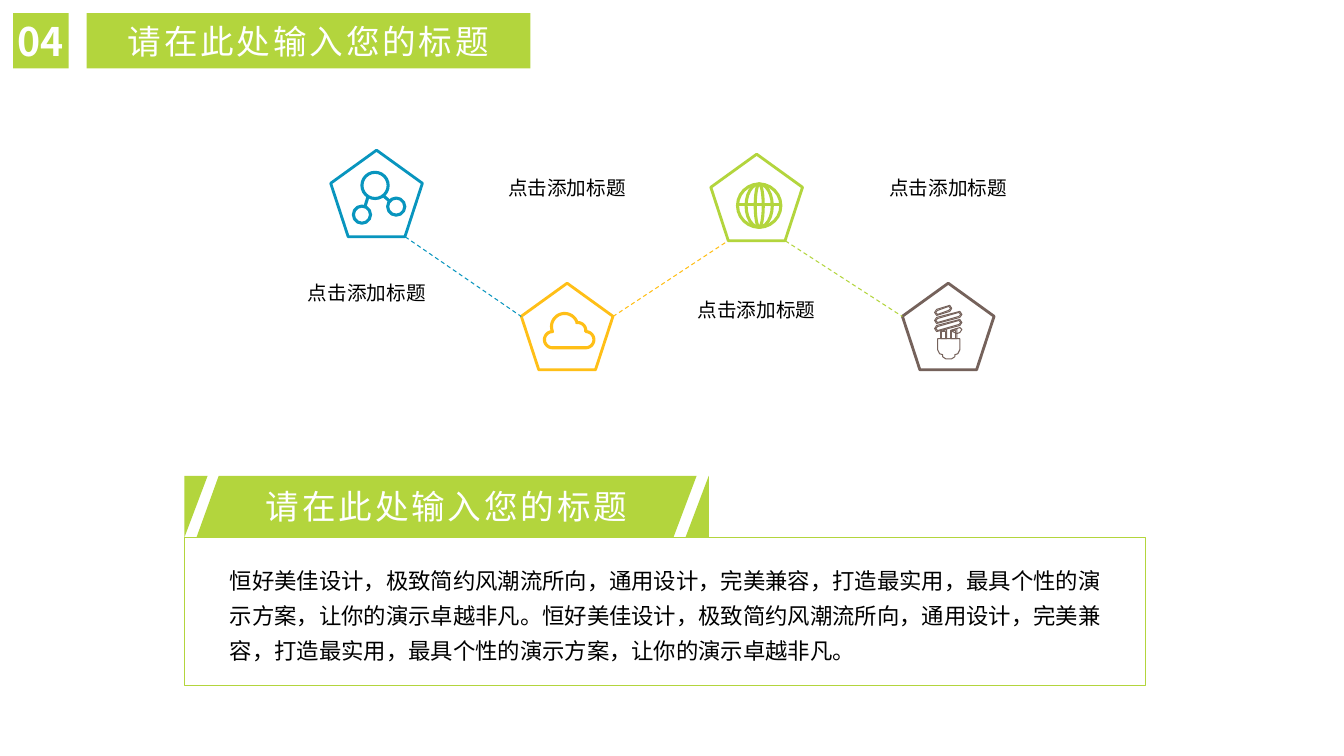
"""Build the four-step pentagon slide."""
from math import cos, radians, sin
from lxml import etree
from pptx import Presentation
from pptx.dml.color import RGBColor
from pptx.enum import dml, shapes, text
from pptx.oxml import ns
from pptx.util import Inches, Pt

BLUE = RGBColor(0x08, 0x95, 0xBE)
AMBER = RGBColor(0xFF, 0xBF, 0x17)
GREEN = RGBColor(0xB3, 0xD5, 0x3D)
BROWN = RGBColor(0x75, 0x62, 0x5B)
BLACK = RGBColor(0, 0, 0)
WHITE = RGBColor(0xFF, 0xFF, 0xFF)
KIND = shapes.MSO_SHAPE
MID = text.MSO_ANCHOR.MIDDLE
CENTER = text.PP_ALIGN.CENTER
HEAD = "请在此处输入您的标题"
LABEL = "点击添加标题"
CLAIM = "恒好美佳设计，极致简约风潮流所向，通用设计，完美兼容，打造最实用，最具个性的演示方案，让你的演示卓越非凡。"
STEPS = ((3.28, 1.49, BLUE), (5.17, 2.81, AMBER), (7.05, 1.53, GREEN), (8.95, 2.81, BROWN))


def assign(item, values):
    for name, value in values.items():
        setattr(item, name, value)


def arc(x, y, size, start, end):
    turns = [radians(start + (end - start) * n / 24) for n in range(25)]
    return [(x + size * cos(a), y + size * sin(a)) for a in turns]


class Deck:
    """Hold the style and the current slide."""
    plain = {"name": "Arial", "size": Pt(14)}
    title = {"name": "Noto Sans CJK SC", "size": Pt(24)}
    asian = "Noto Sans CJK SC"

    def __init__(self, show, layout):
        self.slide = show.slides.add_slide(show.slide_layouts[layout])
        self.items = self.slide.shapes

    def paint(self, item, fill=None, line=None, width=0.75):
        if fill is None:
            item.fill.background()
        else:
            item.fill.solid()
            item.fill.fore_color.rgb = fill
        if line is None:
            item.line.fill.background()
        else:
            item.line.color.rgb = line
            item.line.width = Pt(width)
        if not item.is_placeholder:
            item.shadow.inherit = False
        return item

    def shape(self, kind, box, **look):
        return self.paint(self.items.add_shape(kind, *map(Inches, box)), **look)

    def ring(self, x, y, wide, high, color):
        box = (x - wide / 2, y - high / 2, wide, high)
        self.shape(KIND.OVAL, box, line=color, width=2.2)

    def outline(self, loops, **look):
        form = None
        for loop in loops:
            first, *rest = [(Inches(x), Inches(y)) for x, y in loop]
            if form is None:
                form = self.items.build_freeform(*first)
            else:
                form.move_to(*first)
            form.add_line_segments(rest, close=True)
        return self.paint(form.convert_to_shape(), **look)

    def line(self, start, end, color, width=0.75, dash=None):
        ends = map(Inches, (*start, *end))
        link = self.items.add_connector(shapes.MSO_CONNECTOR.STRAIGHT, *ends)
        link.line.color.rgb = color
        assign(link.line, {"width": Pt(width), "dash_style": dash})
        etree.SubElement(link._element.spPr, ns.qn("a:effectLst"))

    def put(self, item, words, font, color, frame=None, para=None, space=0):
        box = item.text_frame
        assign(box, {"word_wrap": True, "auto_size": text.MSO_AUTO_SIZE.NONE,
                     **(frame or {})})
        block = box.paragraphs[0]
        assign(block, {"alignment": CENTER, **(para or {})})
        run = block.add_run()
        run.text = words
        assign(run.font, font)
        run.font.color.rgb = color
        props = run._r.get_or_add_rPr()
        props.set("lang", "zh-CN")
        if space:
            props.set("spc", str(space))
        face = etree.Element(ns.qn("a:ea"))
        face.set("typeface", self.asian)
        props.find(ns.qn("a:latin")).addnext(face)
        return block

    def label(self, box, words):
        self.put(self.items.add_textbox(*map(Inches, box)), words, self.plain, BLACK)

    def holder(self, index, box):
        item = self.slide.placeholders[index]
        assign(item, dict(zip(("left", "top", "width", "height"), map(Inches, box))))
        return item

    def nodes(self):
        for x, y, color in STEPS:
            self.shape(KIND.REGULAR_PENTAGON, (x, y, 0.91, 0.86), line=color, width=2)
        for (x, y, color), (far, base, _) in zip(STEPS, STEPS[1:]):
            if y < base:
                ends = (x + 0.74, y + 0.86), (far, base + 0.33)
            else:
                ends = (x + 0.91, y + 0.33), (far + 0.17, base + 0.86)
            self.line(*ends, color, dash=dml.MSO_LINE.DASH)

    def network(self):
        for x, y, size in ((3.72, 1.84, 0.26), (3.59, 2.13, 0.17), (3.93, 2.05, 0.17)):
            self.ring(x, y, size, size, BLUE)
        self.line((3.65, 1.95), (3.62, 2.05), BLUE, 2.2)
        self.line((3.8, 1.94), (3.87, 2), BLUE, 2.2)

    def globe(self):
        for wide in (0.43, 0.26, 0.08):
            self.ring(7.53, 2.04, wide, 0.43, GREEN)
        self.line((7.31, 2.03), (7.74, 2.03), GREEN, 2.2)

    def cloud(self):
        edge = (arc(5.48, 3.37, 0.08, 90, 270) + arc(5.6, 3.24, 0.13, 160, 340)
                + arc(5.73, 3.28, 0.08, 262, 360) + arc(5.81, 3.37, 0.08, 270, 450))
        self.outline([edge], line=AMBER, width=2.2)

    def bulb(self):
        loops = []
        for left, right, low, rise in ((9.27, 9.44, 3.1, 0.04), (9.27, 9.54, 3.18, 0.06),
                                       (9.27, 9.54, 3.26, 0.06)):
            for gap in (0, 0.01):
                a, b, half = left + gap, right - gap, 0.03 - gap
                loops.append([(a, low), (a + 0.02, low - half), (b - 0.02, low - rise - half),
                              (b, low - rise), (b - 0.02, low - rise + half),
                              (a + 0.02, low + half)])
        for x, y in ((9.33, 3.29), (9.43, 3.28)):
            loops.append([(x, y), (x + 0.06, y - 0.02), (x + 0.06, 3.36), (x, 3.36)])
            loops.append([(x + 0.01, y), (x + 0.05, y), (x + 0.05, 3.36), (x + 0.01, 3.36)])
        loops.append([(9.43, 3.28), (9.52, 3.25), (9.54, 3.27), (9.52, 3.3), (9.49, 3.31)])
        loops.append([(9.3, 3.36), (9.52, 3.36), (9.52, 3.47), (9.5, 3.51), (9.47, 3.52),
                      (9.47, 3.54), (9.44, 3.56), (9.38, 3.56), (9.35, 3.54),
                      (9.35, 3.52), (9.32, 3.51), (9.3, 3.47)])
        self.outline(loops, line=BROWN)


show = Presentation()
assign(show, {"slide_width": Inches(13.33), "slide_height": Inches(7.5)})
deck = Deck(show, 1)

top = deck.paint(deck.holder(0, (0.86, 0.13, 4.4, 0.55)), fill=GREEN)
deck.put(top, HEAD, deck.title, WHITE, {"vertical_anchor": MID}, space=200)
sides = dict.fromkeys(("margin_left", "margin_right", "margin_top", "margin_bottom"), 0)
badge = deck.shape(KIND.RECTANGLE, (0.13, 0.13, 0.55, 0.55), fill=GREEN)
deck.put(badge, "04", {**deck.title, "size": Pt(28), "bold": True}, WHITE,
         {**sides, "vertical_anchor": MID})

deck.nodes()
deck.network()
deck.cloud()
deck.globe()
deck.bulb()
for x, y, wide in ((2.67, 2.74, 1.94), (4.56, 1.7, 2.13), (6.44, 2.91, 2.13), (8.34, 1.7, 2.13)):
    deck.label((x, y, wide, 0.34), LABEL)

banner = deck.outline([
    [(1.83, 4.72), (2.06, 4.72), (1.83, 5.33)],
    [(2.17, 4.72), (6.91, 4.72), (6.68, 5.33), (1.95, 5.33)],
    [(7.03, 4.72), (7.03, 5.33), (6.8, 5.33)]], fill=GREEN)
deck.put(banner, HEAD, deck.title, WHITE, {"vertical_anchor": MID}, space=200)
deck.shape(KIND.RECTANGLE, (1.83, 5.33, 9.53, 1.47), line=GREEN, width=1)
body = deck.holder(1, (2.18, 5.49, 8.96, 1.15))
block = deck.put(body, CLAIM * 2, {**deck.plain, "size": Pt(16)}, BLACK,
                 {"vertical_anchor": MID},
                 {"alignment": text.PP_ALIGN.LEFT, "line_spacing": 1.3,
                  "space_before": Pt(6), "space_after": Pt(6)})
props = block._p.get_or_add_pPr()
props.set("marL", "0")
props.set("indent", "0")
etree.SubElement(props, ns.qn("a:buNone"))

show.save("out.pptx")
